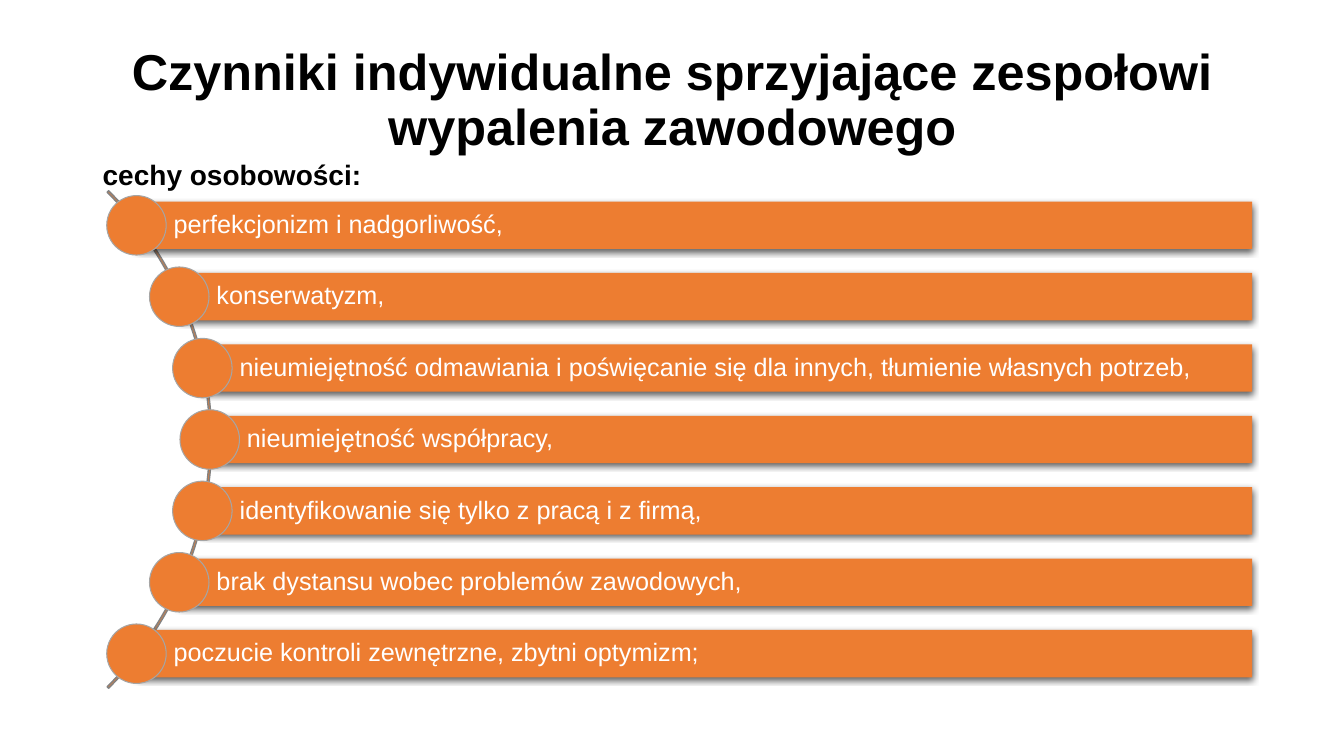
import math
from dataclasses import dataclass

from lxml import etree
from pptx import Presentation
from pptx import util as u
from pptx.dml.color import RGBColor
from pptx.enum import shapes, text
from pptx.oxml.ns import qn

ORANGE = "ED7D31"
ARC_LEFT, ARC_TOP, ARC_SIZE = -4.88, 0.87, 6.98
CENTER_X, CENTER_Y = ARC_LEFT + ARC_SIZE / 2, ARC_TOP + ARC_SIZE / 2
BAR_RADIUS = 3.47
BAR_RIGHT, BAR_HEIGHT = 12.42, 0.47
FIRST_BAR_TOP, LAST_BAR_TOP = 2.0, 6.25
CIRCLE_SIZE = 0.59

TRAITS = [
    "perfekcjonizm i nadgorliwość,",
    "konserwatyzm,",
    "nieumiejętność odmawiania i poświęcanie się dla innych, tłumienie własnych potrzeb,",
    "nieumiejętność współpracy,",
    "identyfikowanie się tylko z pracą i z firmą,",
    "brak dystansu wobec problemów zawodowych,",
    "poczucie kontroli zewnętrzne, zbytni optymizm;",
]


@dataclass
class Box:
    left: float
    top: float
    width: float
    height: float

    def lengths(self):
        return [u.Inches(v) for v in (self.left, self.top, self.width, self.height)]


def color(value: str) -> RGBColor:
    return RGBColor.from_string(value)


def write(shape, content: str, *, size: float, fill: str, bold: bool = False,
          align=text.PP_ALIGN.LEFT, anchor=text.MSO_ANCHOR.TOP,
          spacing: float = 1.0, left: float = 0.1, right: float = 0.1) -> None:
    frame = shape.text_frame
    frame.word_wrap = True
    frame.vertical_anchor = anchor
    frame.margin_left, frame.margin_right = u.Inches(left), u.Inches(right)
    frame.margin_top = frame.margin_bottom = u.Inches(0.05)
    paragraph = frame.paragraphs[0]
    paragraph.alignment = align
    paragraph.line_spacing = spacing
    run = paragraph.add_run()
    run.text = content
    run.font.name = "Arial"
    run.font.size = u.Pt(size)
    run.font.bold = bold
    run.font.color.rgb = color(fill)


def add_orange(slide, kind, box: Box, line: str = "", line_width: float = 0):
    shape = slide.shapes.add_shape(kind, *box.lengths())
    shape.shadow.inherit = False
    shape.fill.solid()
    shape.fill.fore_color.rgb = color(ORANGE)
    if line:
        shape.line.color.rgb = color(line)
        shape.line.width = u.Pt(line_width)
    else:
        shape.line.fill.background()
    return shape


def add_drop_shadow(shape) -> None:
    effects = shape.element.spPr.find(qn("a:effectLst"))
    shadow = etree.SubElement(effects, qn("a:outerShdw"), blurRad=str(u.Pt(4.5)),
                              dist=str(u.Pt(1.5)), dir="5400000",
                              algn="ctr", rotWithShape="0")
    tint = etree.SubElement(shadow, qn("a:srgbClr"), val="000000")
    etree.SubElement(tint, qn("a:alpha"), val="63000")


def add_trait(slide, trait: str, top: float) -> None:
    """Draw a bar that starts on the arc, with a circle over its left end."""
    middle = top + BAR_HEIGHT / 2
    left = CENTER_X + math.sqrt(BAR_RADIUS ** 2 - (middle - CENTER_Y) ** 2)
    bar = add_orange(slide, shapes.MSO_SHAPE.RECTANGLE,
                     Box(left, top, BAR_RIGHT - left, BAR_HEIGHT))
    add_drop_shadow(bar)
    write(bar, trait, size=18, fill="FFFFFF", anchor=text.MSO_ANCHOR.MIDDLE,
          spacing=0.9, left=0.37, right=0.05)
    radius = CIRCLE_SIZE / 2
    add_orange(slide, shapes.MSO_SHAPE.OVAL,
               Box(left - radius, middle - radius, CIRCLE_SIZE, CIRCLE_SIZE), "A5A5A5", 0.75)


def main() -> None:
    presentation = Presentation()
    presentation.slide_width, presentation.slide_height = u.Inches(13.33), u.Inches(7.5)
    slide = presentation.slides.add_slide(presentation.slide_layouts[6])

    subtitle = slide.shapes.add_textbox(*Box(0.92, 1.51, 9.34, 0.46).lengths())
    write(subtitle, "cechy osobowości:", size=20, fill="000000", bold=True)
    title = slide.shapes.add_textbox(*Box(0.92, 0.51, 11.5, 1).lengths())
    write(title, "Czynniki indywidualne sprzyjające zespołowi wypalenia zawodowego",
          size=36, fill="000000", bold=True, align=text.PP_ALIGN.CENTER,
          anchor=text.MSO_ANCHOR.MIDDLE, spacing=0.9)

    arc = add_orange(slide, shapes.MSO_SHAPE.BLOCK_ARC,
                     Box(ARC_LEFT, ARC_TOP, ARC_SIZE, ARC_SIZE), "828282", 1)
    for index, value in enumerate((189, 27, 0.003)):
        arc.adjustments[index] = value

    pitch = (LAST_BAR_TOP - FIRST_BAR_TOP) / (len(TRAITS) - 1)
    for index, trait in enumerate(TRAITS):
        add_trait(slide, trait, FIRST_BAR_TOP + index * pitch)

    presentation.save("out.pptx")


if __name__ == "__main__":
    main()
